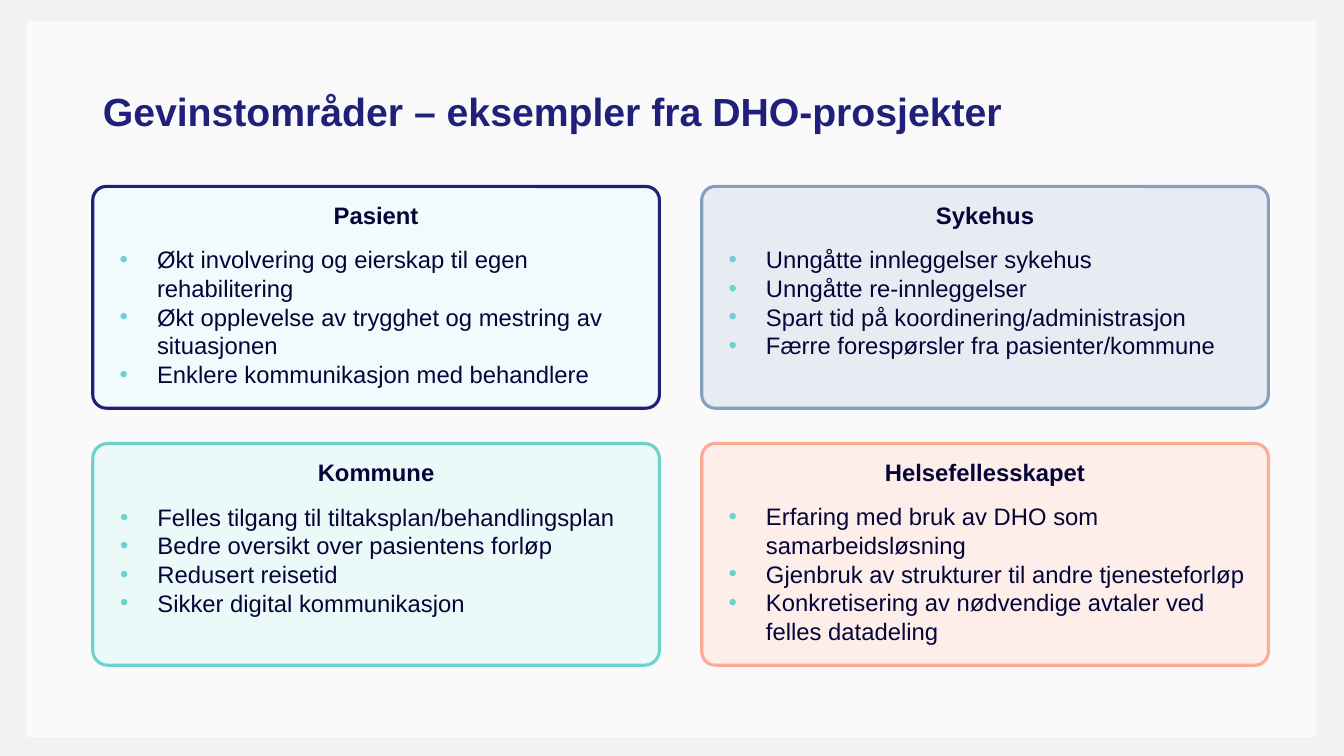
"""Build the slide of benefit areas as four cards."""
from dataclasses import dataclass
from typing import Any

from lxml import etree
from pptx import Presentation
from pptx import util as u
from pptx.dml import color
from pptx.enum import shapes, text
from pptx.oxml import ns


@dataclass(frozen=True)
class Theme:
    """Colours, font and type sizes of the slide."""
    font: str = "Arial"
    back: str = "F1F2F2"
    panel: str = "FAFAFA"
    title: str = "20207A"
    ink: str = "040439"
    dot: str = "6DD2CD"
    large: float = 28
    small: float = 17
    gap: float = 11.5
    edge: float = 2.25


@dataclass(frozen=True)
class Card:
    """One benefit area with its colours and points."""
    head: str
    fill: str
    line: str
    items: tuple[str, ...]
    bend: float = 0.061


THEME = Theme()
LEFT, TOP, WIDTH, HEIGHT = 0.92, 1.85, 5.62, 2.2
STEP_X, STEP_Y = 6.04, 2.55
CARDS = (
    Card("Pasient", "F1FBFD", "20207A", (
        "Økt involvering og eierskap til egen rehabilitering",
        "Økt opplevelse av trygghet og mestring av situasjonen",
        "Enklere kommunikasjon med behandlere")),
    Card("Sykehus", "E7ECF2", "85A0BE", (
        "Unngåtte innleggelser sykehus",
        "Unngåtte re-innleggelser",
        "Spart tid på koordinering/administrasjon",
        "Færre forespørsler fra pasienter/kommune")),
    Card("Kommune", "EBF9F8", "6DD2CD", (
        "Felles tilgang til tiltaksplan/behandlingsplan",
        "Bedre oversikt over pasientens forløp",
        "Redusert reisetid",
        "Sikker digital kommunikasjon"), 0.067),
    Card("Helsefellesskapet", "FEEEEA", "FCAC94", (
        "Erfaring med bruk av DHO som samarbeidsløsning",
        "Gjenbruk av strukturer til andre tjenesteforløp",
        "Konkretisering av nødvendige avtaler ved felles datadeling")),
)


def rgb(code: str) -> color.RGBColor:
    """Turn a hex code into a colour."""
    return color.RGBColor.from_string(code)


def apply(item: Any, form: dict[str, Any]) -> None:
    """Set each named value on an object."""
    for name, value in form.items():
        setattr(item, name, value)


def style(para: Any, size: float, ink: str, bold: bool) -> None:
    """Set the type of a paragraph."""
    apply(para.font, {"name": THEME.font, "size": u.Pt(size), "bold": bold})
    para.font.color.rgb = rgb(ink)


def inset(frame: Any, side: float, end: float, anchor: Any) -> None:
    """Set the margins and anchor of a text frame."""
    apply(frame, {
        "word_wrap": True, "vertical_anchor": anchor,
        "margin_left": u.Inches(side), "margin_right": u.Inches(side),
        "margin_top": u.Inches(end), "margin_bottom": u.Inches(end)})


def bullet(para: Any) -> None:
    """Give a paragraph a coloured dot and a hanging indent."""
    props = para._p.get_or_add_pPr()
    props.set("marL", str(u.Inches(0.5)))
    props.set("indent", str(u.Inches(-0.37)))
    tint = etree.SubElement(props, ns.qn("a:buClr"))
    etree.SubElement(tint, ns.qn("a:srgbClr"), val=THEME.dot)
    etree.SubElement(props, ns.qn("a:buFont"), typeface=THEME.font)
    etree.SubElement(props, ns.qn("a:buChar"), char="•")


def draw_panel(slide: Any) -> None:
    """Draw the pale panel behind everything."""
    panel = slide.shapes.add_shape(
        shapes.MSO_SHAPE.RECTANGLE, u.Inches(0.26), u.Inches(0.21),
        u.Inches(12.79), u.Inches(7.1))
    panel.shadow.inherit = False
    panel.fill.solid()
    panel.fill.fore_color.rgb = rgb(THEME.panel)
    panel.line.fill.background()
    slide.shapes._spTree.insert(2, panel._element)


def draw_title(slide: Any) -> None:
    """Fill and place the title."""
    title = slide.shapes.title
    apply(title, {"left": u.Inches(LEFT), "top": u.Inches(0.4),
                  "width": u.Inches(11.5), "height": u.Inches(1.45)})
    frame = title.text_frame
    frame.text = "Gevinstområder – eksempler fra DHO-prosjekter"
    inset(frame, 0.1, 0.05, text.MSO_ANCHOR.MIDDLE)
    para = frame.paragraphs[0]
    apply(para, {"alignment": text.PP_ALIGN.LEFT, "line_spacing": 0.9})
    style(para, THEME.large, THEME.title, True)


def draw_card(slide: Any, card: Card, left: float, top: float) -> None:
    """Draw one card with its heading and list."""
    box = slide.shapes.add_shape(
        shapes.MSO_SHAPE.ROUNDED_RECTANGLE, u.Inches(left), u.Inches(top),
        u.Inches(WIDTH), u.Inches(HEIGHT))
    box.adjustments[0] = card.bend
    box.shadow.inherit = False
    box.fill.solid()
    box.fill.fore_color.rgb = rgb(card.fill)
    box.line.color.rgb = rgb(card.line)
    box.line.width = u.Pt(THEME.edge)
    frame = box.text_frame
    inset(frame, 0.1, 0.1, text.MSO_ANCHOR.TOP)
    head = frame.paragraphs[0]
    head.text = card.head
    apply(head, {"alignment": text.PP_ALIGN.CENTER,
                 "space_after": u.Pt(THEME.gap)})
    style(head, THEME.small, THEME.ink, True)
    for item in card.items:
        para = frame.add_paragraph()
        para.text = item
        para.alignment = text.PP_ALIGN.LEFT
        bullet(para)
        style(para, THEME.small, THEME.ink, False)


def main() -> None:
    """Build and save the slide."""
    deck = Presentation()
    apply(deck, {"slide_width": u.Inches(13.33),
                 "slide_height": u.Inches(7.5)})
    slide = deck.slides.add_slide(deck.slide_layouts[5])
    slide.background.fill.solid()
    slide.background.fill.fore_color.rgb = rgb(THEME.back)
    draw_panel(slide)
    draw_title(slide)
    for index, card in enumerate(CARDS):
        row, col = divmod(index, 2)
        draw_card(slide, card, LEFT + col * STEP_X, TOP + row * STEP_Y)
    deck.save("out.pptx")


if __name__ == "__main__":
    main()
